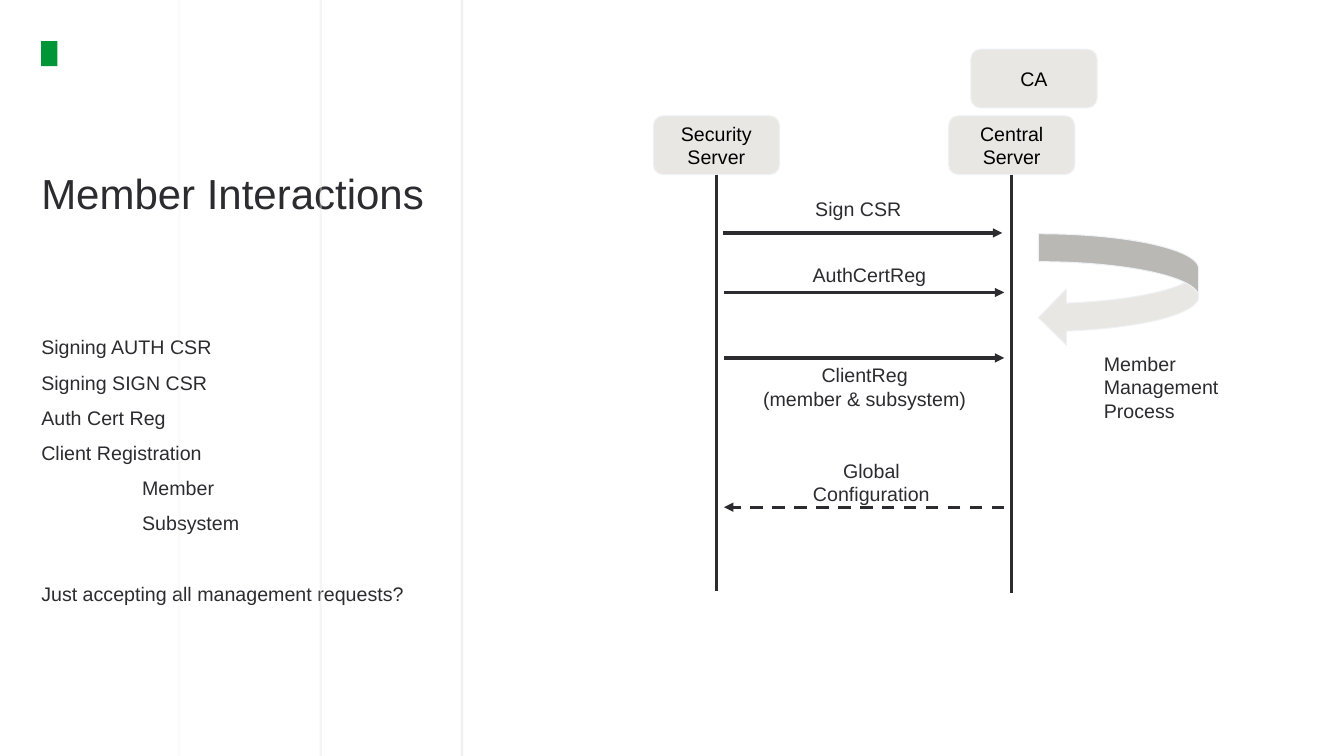
"""Build the Member Interactions slide with its message sequence diagram."""
from dataclasses import dataclass

from lxml.etree import SubElement
from pptx import Presentation
from pptx.dml.color import RGBColor as RGB
from pptx.enum.dml import MSO_LINE
from pptx.enum.shapes import MSO_CONNECTOR, MSO_SHAPE
from pptx.enum.text import MSO_ANCHOR, MSO_AUTO_SIZE, PP_ALIGN
from pptx.oxml.ns import qn
from pptx.util import Cm, Pt


@dataclass(frozen=True)
class Theme:
    ink: RGB = RGB(0x2C, 0x2C, 0x30)
    black: RGB = RGB(0, 0, 0)
    sand: RGB = RGB(0xE8, 0xE7, 0xE3)
    edge: RGB = RGB(0xEE, 0xF2, 0xF5)
    green: RGB = RGB(0x00, 0x96, 0x38)
    font: str = "Arial"
    title: Pt = Pt(30)
    text: Pt = Pt(14)


theme = Theme()


def write(tf, text, size=theme.text, color=theme.ink, align=PP_ALIGN.LEFT,
          anchor=MSO_ANCHOR.TOP, inset=0.25):
    tf.word_wrap = True
    tf.auto_size = MSO_AUTO_SIZE.NONE
    tf.vertical_anchor = anchor
    tf.margin_left = tf.margin_right = tf.margin_top = tf.margin_bottom = Cm(inset)
    tf.text = text
    for p in tf.paragraphs:
        p.alignment = align
        for r in p.runs:
            r.font.name, r.font.size = theme.font, size
            r.font.color.rgb = color


def connect(x1, y1, x2, y2, color=theme.ink, width=2.25, arrow=False):
    line = s.shapes.add_connector(MSO_CONNECTOR.STRAIGHT, Cm(x1), Cm(y1), Cm(x2), Cm(y2))
    line.line.color.rgb = color
    line.line.width = Pt(width)
    if arrow:
        SubElement(line.line._get_or_add_ln(), qn("a:tailEnd"), type="triangle")
    SubElement(line._element.spPr, qn("a:effectLst"))
    return line


prs = Presentation()
prs.slide_width, prs.slide_height = Cm(33.86), Cm(19.05)
s = prs.slides.add_slide(prs.slide_layouts[1])

for i in range(3):
    x = 4.52 + i * 3.56
    guide = connect(x, 0, x, 19.05, color=theme.sand, width=1.5)
    clr = next(guide._element.iter(qn("a:srgbClr")))
    SubElement(clr, qn("a:alpha"), val=str(20000 * (i + 1)))

mark = s.shapes.add_shape(MSO_SHAPE.RECTANGLE, Cm(1.04), Cm(1.04), Cm(0.41), Cm(0.63))
mark.shadow.inherit = False
mark.fill.solid()
mark.fill.fore_color.rgb = theme.green
mark.line.fill.background()

title, body = s.shapes.title, s.placeholders[1]
for ph, top, height in ((title, 4.22, 3.86), (body, 8.33, 8.99)):
    ph.left, ph.top, ph.width, ph.height = Cm(1.04), Cm(top), Cm(9.88), Cm(height)
write(title.text_frame, "Member Interactions", size=theme.title, inset=0)

items = [("Signing AUTH CSR", 0, 5), ("Signing SIGN CSR", 0, 5), ("Auth Cert Reg", 0, 5),
         ("Client Registration", 0, 5), ("Member", 2.54, 5), ("Subsystem", 2.54, 5),
         ("Just accepting all management requests?", 0, 30)]
write(body.text_frame, "\n".join(text for text, _, _ in items), inset=0)
for p, (_, indent, before) in zip(body.text_frame.paragraphs, items):
    p.line_spacing, p.space_before = 1.2, Pt(before)
    pPr = p._p.get_or_add_pPr()
    pPr.set("marL", str(Cm(indent)))
    pPr.set("indent", "0")
    SubElement(pPr, qn("a:buNone"))

for name, x, y, end in (("Security Server", 16.46, 2.92, 14.88),
                        ("Central Server", 23.9, 2.92, 14.94),
                        ("CA", 24.46, 1.24, None)):
    box = s.shapes.add_shape(MSO_SHAPE.ROUNDED_RECTANGLE, Cm(x), Cm(y), Cm(3.18), Cm(1.48))
    box.shadow.inherit = False
    box.fill.solid()
    box.fill.fore_color.rgb = theme.sand
    box.line.color.rgb, box.line.width = theme.edge, Pt(0.75)
    write(box.text_frame, name, color=theme.black, align=PP_ALIGN.CENTER,
          anchor=MSO_ANCHOR.MIDDLE)
    if end:
        lifeline = connect(x + 1.59, y + 1.48, x + 1.59, end)
        lifeline.begin_connect(box, 2)

for x1, x2, y in ((18.21, 25.25, 5.87), (18.24, 25.3, 7.37), (18.24, 25.3, 9.02)):
    connect(x1, y, x2, y, arrow=True)
reply = connect(25.3, 12.78, 18.24, 12.78, arrow=True)
reply.line.dash_style = MSO_LINE.DASH

centred = {"align": PP_ALIGN.CENTER, "anchor": MSO_ANCHOR.MIDDLE}
for text, x, y, w, h, style in (
        ("Sign CSR", 19.81, 4.85, 3.63, 0.84, centred),
        ("AuthCertReg", 20.09, 6.5, 3.63, 0.84, centred),
        ("ClientReg\n(member & subsystem)", 18.42, 9.32, 6.73, 0.84, centred),
        ("Global Configuration", 19.81, 11.33, 4.29, 1.63, centred),
        ("Member Management Process", 27.56, 8.61, 3.63, 2.13, {})):
    label = s.shapes.add_textbox(Cm(x), Cm(y), Cm(w), Cm(h))
    write(label.text_frame, text, **style)

loop = s.shapes.add_shape(MSO_SHAPE.CURVED_LEFT_ARROW, Cm(26.16), Cm(5.89), Cm(4.04), Cm(2.82))
loop.shadow.inherit = False
loop.fill.solid()
loop.fill.fore_color.rgb = theme.sand
loop.line.color.rgb, loop.line.width = theme.edge, Pt(0.75)

prs.save("out.pptx")
